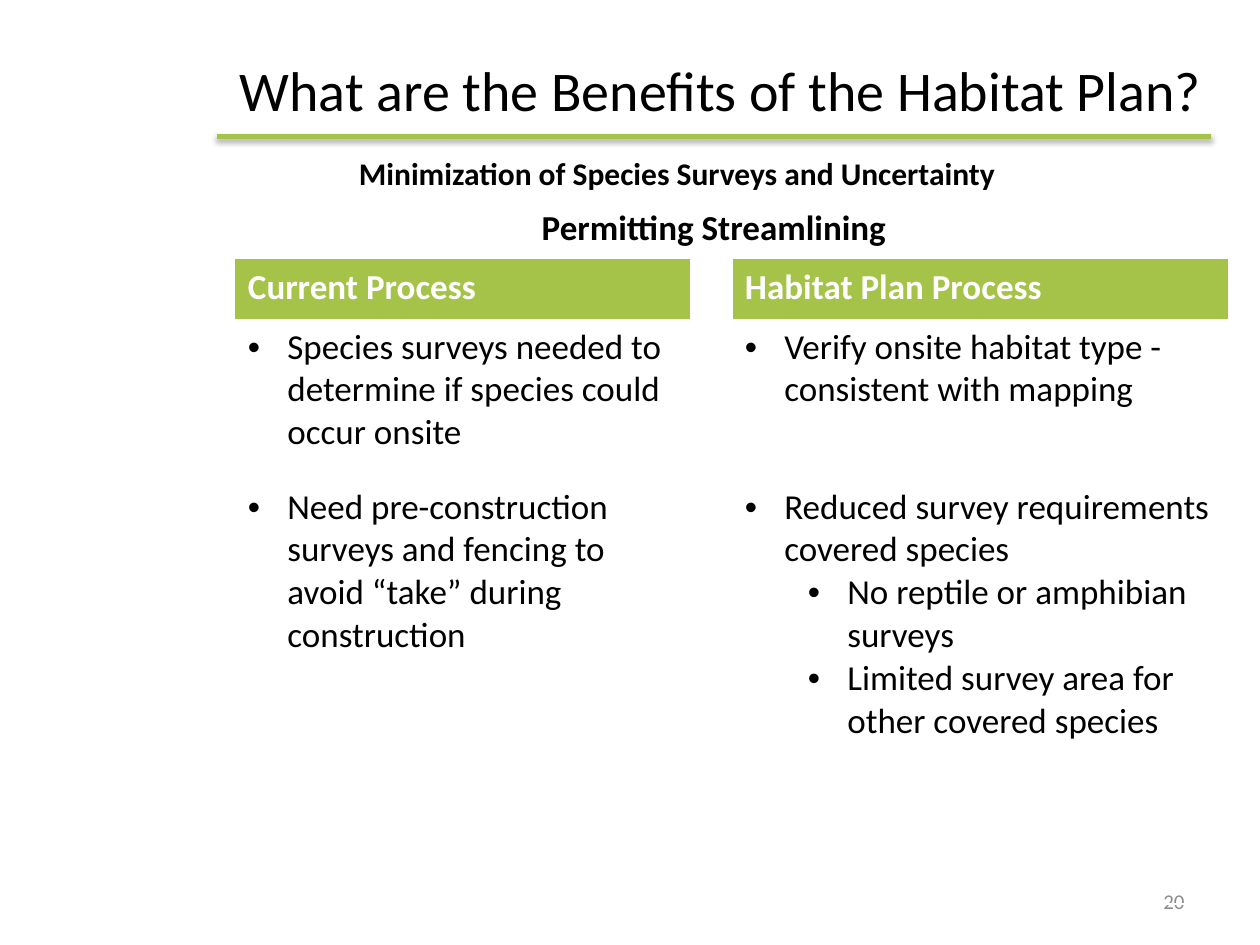
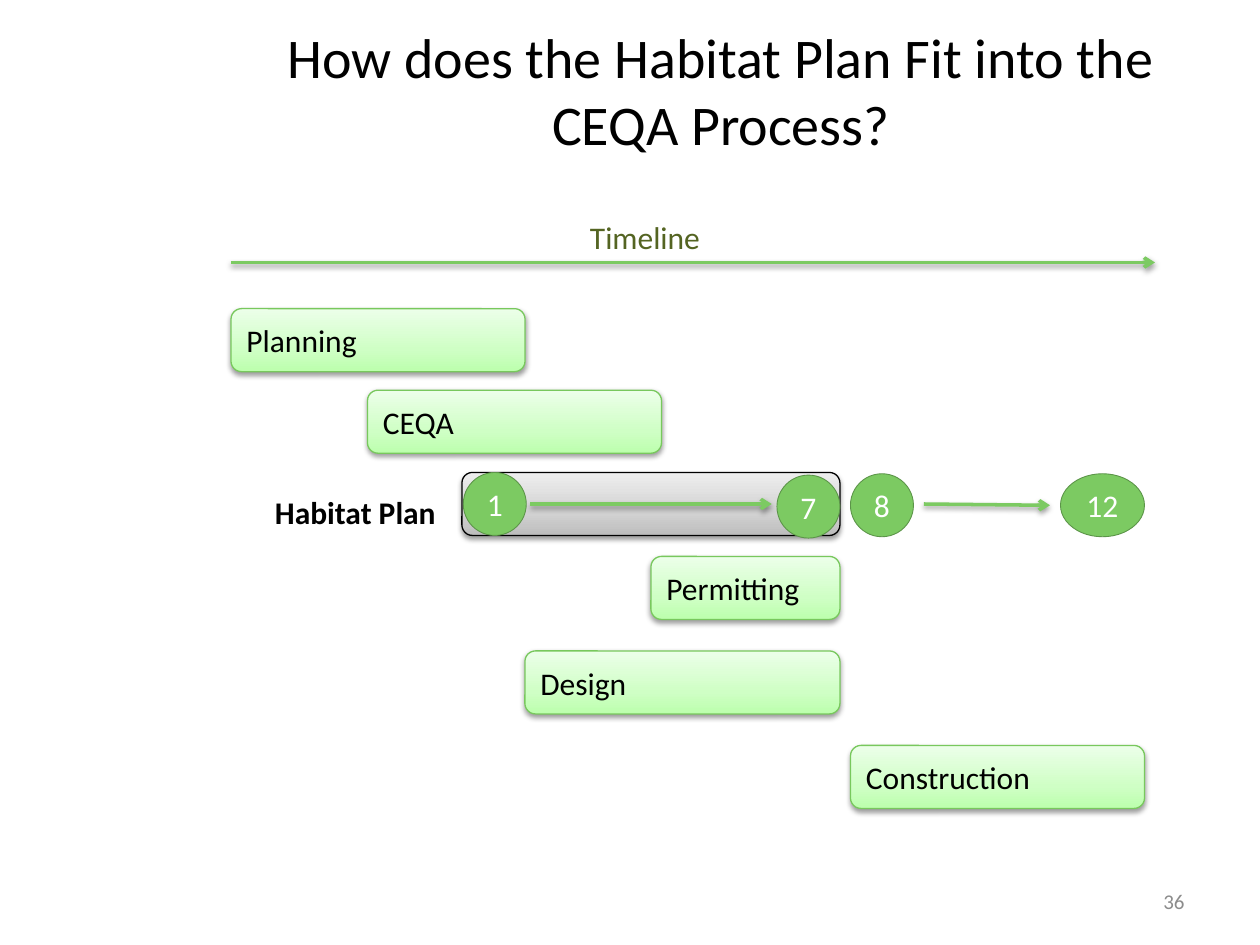
from copy import deepcopy

from lxml.etree import SubElement
from pptx import Presentation
from pptx.dml.color import RGBColor
from pptx.enum.shapes import MSO_CONNECTOR as CONN, MSO_SHAPE as SHAPE
from pptx.enum.text import MSO_ANCHOR as ANCHOR, PP_ALIGN as ALIGN
from pptx.oxml.ns import qn
from pptx.util import Pt

FONT = "Calibri"
COLORS = {
    "black": "000000",
    "white": "FFFFFF",
    "number": "8C8C8C",
    "olive": "A5C249",
    "olive_edge": "A3C144",
    "olive_text": "546422",
    "green": "7CCA62",
    "green_edge": "5C9549",
    "phase_edge": "78C85D",
}
PHASE_STOPS = ["BCFFAD", "CFFFC5", "ECFFE9"]
PLAN_STOPS = ["BDBDBD", "D1D1D1", "EEEEEE"]
STOP_POSITIONS = [0, 0.35, 1]
BAR_HEIGHT = 36


def rgb(name):
    return RGBColor.from_string(COLORS[name])


def style(p, size, color="black", bold=False, align=ALIGN.LEFT):
    p.alignment = align
    for r in p.runs:
        r.font.name = FONT
        r.font.size = Pt(size)
        r.font.bold = bold
        r.font.color.rgb = rgb(color)


def add_text(slide, text, box, size, color="black", bold=False,
             align=ALIGN.LEFT, anchor=ANCHOR.TOP, wrap=True):
    tf = slide.shapes.add_textbox(*map(Pt, box)).text_frame
    tf.text = text
    tf.word_wrap = wrap
    tf.vertical_anchor = anchor
    style(tf.paragraphs[0], size, color, bold, align)


def add_slide(prs, title, number):
    slide = prs.slides.add_slide(prs.slide_layouts[6])
    add_text(slide, title, (128, 6, 568, 90), 32,
             align=ALIGN.CENTER, anchor=ANCHOR.MIDDLE)
    add_text(slide, str(number), (516, 500.5, 168, 28.75), 12, "number",
             align=ALIGN.RIGHT, anchor=ANCHOR.MIDDLE)
    return slide


def add_shadow(s, alpha=38, distance=1.6):
    sp_pr = s._element.spPr
    effects = sp_pr.find(qn("a:effectLst"))
    if effects is None:
        effects = SubElement(sp_pr, qn("a:effectLst"))
    shadow = SubElement(effects, qn("a:outerShdw"), blurRad=str(Pt(3.1)),
                        dist=str(Pt(distance)), dir="5400000", rotWithShape="0")
    shade = SubElement(shadow, qn("a:srgbClr"), val=COLORS["black"])
    SubElement(shade, qn("a:alpha"), val=str(alpha * 1000))


def add_line(slide, start, end, color, width, arrow=False, **shadow):
    s = slide.shapes.add_connector(CONN.STRAIGHT, *map(Pt, start + end))
    s.line.color.rgb = rgb(color)
    s.line.width = Pt(width)
    if arrow:
        SubElement(s._element.spPr.find(qn("a:ln")), qn("a:tailEnd"), type="arrow")
    add_shadow(s, **shadow)


def add_shape(slide, kind, box, edge, width):
    s = slide.shapes.add_shape(kind, *map(Pt, box))
    s.shadow.inherit = False
    s.line.color.rgb = rgb(edge)
    s.line.width = Pt(width)
    s.text_frame.vertical_anchor = ANCHOR.MIDDLE
    return s


def add_bar(slide, text, left, top, width, stops=PHASE_STOPS, edge="phase_edge"):
    s = add_shape(slide, SHAPE.ROUNDED_RECTANGLE,
                  (left, top, width, BAR_HEIGHT), edge, 0.75)
    s.fill.gradient()
    s.fill.gradient_angle = 90
    stop_list = s._element.spPr.find(qn("a:gradFill")).find(qn("a:gsLst"))
    stop_list.append(deepcopy(stop_list[0]))
    for stop, position, color in zip(s.fill.gradient_stops, STOP_POSITIONS, stops):
        stop.position = position
        stop.color.rgb = RGBColor.from_string(color)
    add_shadow(s)
    if text:
        s.text_frame.text = text
        style(s.text_frame.paragraphs[0], 18)


def add_step(slide, number, left, top, width=36):
    s = add_shape(slide, SHAPE.OVAL, (left, top, width, 36), "green_edge", 0.5)
    s.fill.solid()
    s.fill.fore_color.rgb = rgb("green")
    s.text_frame.text = str(number)
    style(s.text_frame.paragraphs[0], 18, "white", align=ALIGN.CENTER)


def add_bullet(p, level):
    p.level = level
    p_pr = p._p.get_or_add_pPr()
    p_pr.set("marL", str(Pt(22.5 + 36 * level)))
    p_pr.set("indent", str(Pt(-22.5)))
    SubElement(p_pr, qn("a:buFont"), typeface="Arial")
    SubElement(p_pr, qn("a:buChar"), char="•")


def fill_header(cell, text, side):
    for tag in sorted((side, "lnT")):
        ln = SubElement(cell._tc.get_or_add_tcPr(), qn("a:" + tag), w=str(Pt(0.75)))
        fill = SubElement(ln, qn("a:solidFill"))
        SubElement(fill, qn("a:srgbClr"), val=COLORS["olive_edge"])
    cell.fill.solid()
    cell.fill.fore_color.rgb = rgb("olive")
    cell.text_frame.text = text
    style(cell.text_frame.paragraphs[0], 20, "white", True)


def fill_bullets(cell, items):
    tf = cell.text_frame
    tf.text = "\n".join(text for level, text in items)
    for p, (level, text) in zip(tf.paragraphs, items):
        add_bullet(p, level)
        style(p, 20)


def add_comparison(slide, left, top, widths, heights, headers, rows):
    frame = slide.shapes.add_table(len(heights), len(widths), Pt(left), Pt(top),
                                   Pt(sum(widths)), Pt(sum(heights)))
    table = frame.table
    table.first_row = table.horz_banding = False
    for column, width in zip(table.columns, widths):
        column.width = Pt(width)
    for row, height in zip(table.rows, heights):
        row.height = Pt(height)
    for col, side, header in zip((0, 2), ("lnL", "lnR"), headers):
        fill_header(table.cell(0, col), header, side)
        for i, row in enumerate(rows, 1):
            fill_bullets(table.cell(i, col), row[col // 2])
    for cell in table.iter_cells():
        if not cell.text_frame.text or cell.text_frame.text not in headers:
            cell.fill.background()


def build_benefits(prs):
    slide = add_slide(prs, "What are the Benefits of the Habitat Plan?", 20)
    add_line(slide, (124, 78), (692, 78), "olive", 3, alpha=35, distance=1.8)
    add_text(slide, "Permitting Streamlining", (124, 113.75, 568, 34.5), 20,
             bold=True, align=ALIGN.CENTER)
    add_comparison(
        slide, 134.5, 148.5, (260, 24, 283), (34, 91.5, 242.5),
        ("Current Process", "Habitat Plan Process"),
        [
            ([(0, "Species surveys needed to determine if species could occur onsite")],
             [(0, "Verify onsite habitat type - consistent with mapping")]),
            ([(0, "Need pre-construction surveys and fencing to avoid “take” "
                  "during construction")],
             [(0, "Reduced survey requirements covered species"),
              (1, "No reptile or amphibian surveys"),
              (1, "Limited survey area for other covered species")]),
        ])
    add_text(slide, "Minimization of Species Surveys and Uncertainty",
             (198, 84.25, 381, 29), 18, bold=True, wrap=False)


def build_timeline(prs):
    slide = add_slide(prs, "How does the Habitat Plan Fit into the CEQA Process?", 36)
    for phase in [
        ("Planning", 132, 176.4, 168),
        ("Design", 300, 372, 180),
        ("CEQA", 210, 223, 168),
        ("", 264, 270, 216, PLAN_STOPS, "black"),
        ("Permitting", 372, 318, 108),
        ("Construction", 486, 426, 168),
    ]:
        add_bar(slide, *phase)
    add_text(slide, "Timeline", (330, 121, 78.5, 29), 18, "olive_text", wrap=False)
    for step in [(7, 444, 271.5), (8, 486, 270.75), (12, 606, 270.75, 48),
                 (1, 264.75, 270)]:
        add_step(slide, *step)
    for start, end in [((132, 150), (660, 150)), ((303, 288), (441, 288)),
                       ((528, 288), (600, 288.75))]:
        add_line(slide, start, end, "green", 2, arrow=True)
    add_text(slide, "Habitat Plan", (150, 278, 107, 29), 18, bold=True, wrap=False)


def main():
    prs = Presentation()
    prs.slide_width, prs.slide_height = Pt(720), Pt(540)
    build_benefits(prs)
    build_timeline(prs)
    prs.save("out.pptx")


if __name__ == "__main__":
    main()
